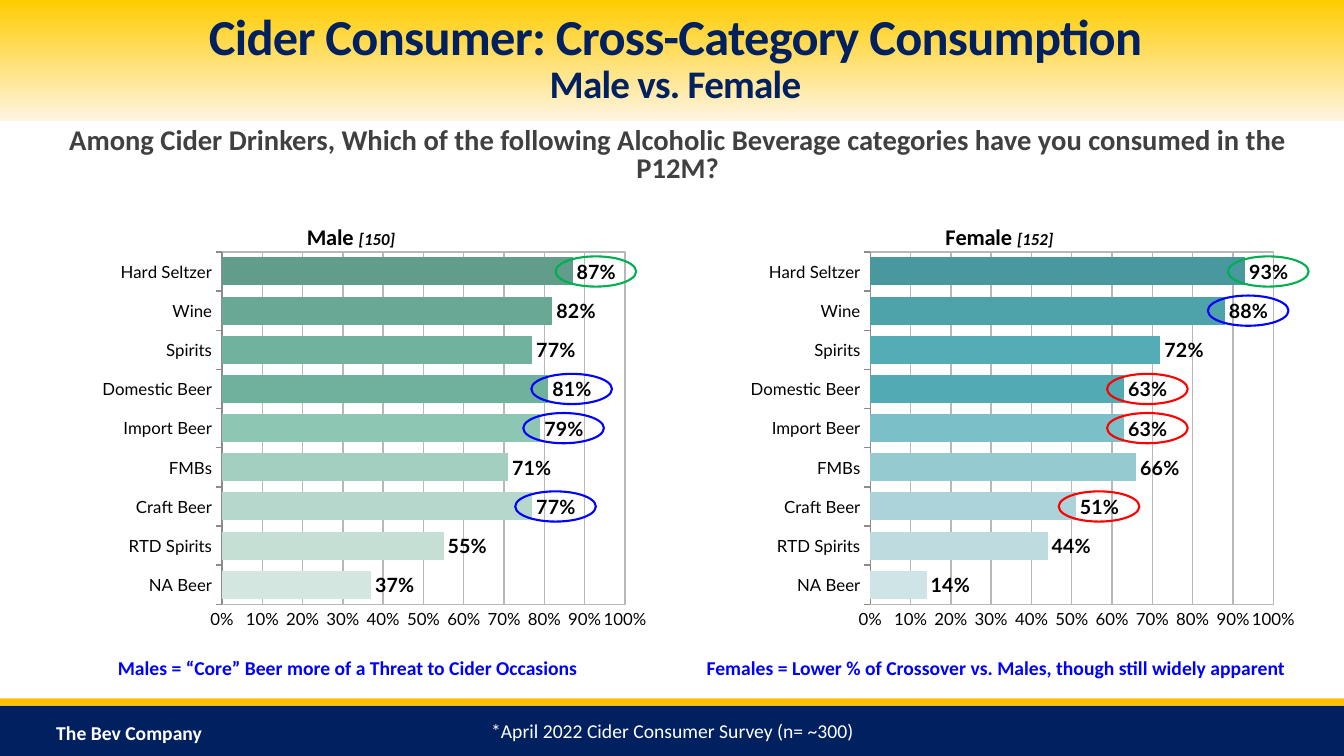
from pptx import Presentation
from pptx.chart.data import CategoryChartData
from pptx.dml.color import RGBColor
from pptx.enum.chart import XL_CHART_TYPE, XL_LABEL_POSITION, XL_TICK_MARK
from pptx.enum.shapes import MSO_SHAPE
from pptx.enum.text import MSO_ANCHOR, PP_ALIGN
from pptx.oxml import parse_xml
from pptx.oxml.ns import nsdecls, qn
from pptx.util import Inches, Pt

NAVY = RGBColor(0x00, 0x20, 0x60)
GOLD = RGBColor(0xFF, 0xC0, 0x00)
YELLOW = RGBColor(0xFF, 0xCC, 0x00)
CREAM = RGBColor(0xFF, 0xF4, 0xE2)
WHITE = RGBColor(0xFF, 0xFF, 0xFF)
BLACK = RGBColor(0x00, 0x00, 0x00)
CHARCOAL = RGBColor(0x40, 0x40, 0x40)
AXIS_GRAY = RGBColor(0x8C, 0x8C, 0x8C)
GRID_GRAY = RGBColor(0xB8, 0xB8, 0xB8)
BLUE = RGBColor(0x00, 0x00, 0xFF)
RED = RGBColor(0xFF, 0x00, 0x00)
GREEN = RGBColor(0x00, 0xB0, 0x50)

COLUMNS, ROWS = 133.3, 75
CHART_TOP, CHART_WIDTH, CHART_HEIGHT = 20, 65, 45
PLOT_X, PLOT_Y, PLOT_WIDTH, PLOT_HEIGHT = 0.308, 0.111, 0.615, 0.777
RING_WIDTH, RING_HEIGHT, RING_OVERLAP = 8, 3, 1.7

BEVERAGES = ["NA Beer", "RTD Spirits", "Craft Beer", "FMBs", "Import Beer",
             "Domestic Beer", "Spirits", "Wine", "Hard Seltzer"]
PANELS = [
    dict(left=66.3, name="Female", sample="[152]", title_x=0.418,
         shares=[0.14, 0.44, 0.51, 0.66, 0.63, 0.63, 0.72, 0.88, 0.93],
         shades="CFE4E7 BEDCE0 ACD3D9 96CAD1 7BC0C8 52AAB4 53ACB6 4EA2AA 49979F",
         rings={"Hard Seltzer": GREEN, "Wine": BLUE, "Domestic Beer": RED,
                "Import Beer": RED, "Craft Beer": RED},
         note="Females = Lower % of Crossover vs. Males, though still widely apparent"),
    dict(left=2, name="Male", sample="[150]", title_x=0.433,
         shares=[0.37, 0.55, 0.77, 0.71, 0.79, 0.81, 0.77, 0.82, 0.87],
         shades="D3E6E0 C5DFD5 B6D7CC A3CFC0 8EC6B4 6EB19C 6FB39E 68A894 619D8A",
         rings={"Hard Seltzer": GREEN, "Domestic Beer": BLUE,
                "Import Beer": BLUE, "Craft Beer": BLUE},
         note="Males = “Core” Beer more of a Threat to Cider Occasions"),
]


def style_font(font, size, color, name="Calibri", bold=False):
    font.size, font.name, font.bold = Pt(size), name, bold
    font.color.rgb = color


def set_layout(parent, index, **shares):
    for old in parent.findall(qn("c:layout")):
        parent.remove(old)
    places = "".join(f'<c:{key} val="{value}"/>' for key, value in shares.items())
    parent.insert(index, parse_xml(
        f'<c:layout {nsdecls("c")}><c:manualLayout>{places}</c:manualLayout></c:layout>'))


class Page:
    def __init__(self, deck):
        self.slide = deck.slides.add_slide(deck.slide_layouts[6])
        self.column = deck.slide_width / COLUMNS
        self.row = deck.slide_height / ROWS

    def area(self, left, top, width, height):
        return (round(left * self.column), round(top * self.row),
                round(width * self.column), round(height * self.row))

    def shape(self, kind, *place):
        shape = self.slide.shapes.add_shape(kind, *self.area(*place))
        shape.shadow.inherit = False
        return shape

    def band(self, top, height, color):
        band = self.shape(MSO_SHAPE.RECTANGLE, 0, top, COLUMNS, height)
        band.fill.solid()
        band.fill.fore_color.rgb = color
        band.line.fill.background()
        return band

    def gradient_band(self, top, height, *colors):
        fill = self.band(top, height, colors[0]).fill
        fill.gradient()
        fill.gradient_angle = 270
        for stop, color, position in zip(fill.gradient_stops, colors, (0, 1)):
            stop.color.rgb, stop.position = color, position

    def ring(self, left, top, color):
        ring = self.shape(MSO_SHAPE.OVAL, left, top, RING_WIDTH, RING_HEIGHT)
        ring.fill.background()
        ring.line.color.rgb, ring.line.width = color, Pt(1.5)

    def text(self, words, place, size, color, bold=True,
             align=PP_ALIGN.CENTER, anchor=MSO_ANCHOR.TOP):
        frame = self.slide.shapes.add_textbox(*self.area(*place)).text_frame
        frame.word_wrap, frame.vertical_anchor = True, anchor
        para = frame.paragraphs[0]
        para.text, para.alignment = words, align
        style_font(para.font, size, color, bold=bold)
        return frame

    def heading(self, title, subtitle, place):
        frame = self.text(title, place, 36, NAVY, anchor=MSO_ANCHOR.MIDDLE)
        para = frame.paragraphs[0]
        para.line_spacing = 0.85
        para.add_line_break()
        span = para.add_run()
        span.text, span.font.size = subtitle, Pt(27.9)
        for span in para.runs:
            span._r.get_or_add_rPr().set("spc", "-50")

    def question(self, words, place):
        frame = self.text(words, place, 20.4, CHARCOAL, anchor=MSO_ANCHOR.MIDDLE)
        frame.margin_left, frame.margin_right = Inches(0.2), Inches(0.1)
        frame.paragraphs[0].line_spacing = 0.8

    def bar_chart(self, panel):
        data = CategoryChartData(number_format="0%")
        data.categories = BEVERAGES
        data.add_series("Series 1", panel["shares"])
        place = self.area(panel["left"], CHART_TOP, CHART_WIDTH, CHART_HEIGHT)
        chart = self.slide.shapes.add_chart(
            XL_CHART_TYPE.BAR_CLUSTERED, *place, data).chart
        style_font(chart.font, 10, BLACK)
        chart.has_legend = False
        self.chart_title(chart, panel)
        self.axes(chart)
        plot = chart.plots[0]
        plot.gap_width, plot.vary_by_categories = 40, False
        plot.has_data_labels = True
        labels = plot.data_labels
        labels.show_value, labels.position = True, XL_LABEL_POSITION.OUTSIDE_END
        labels.number_format, labels.number_format_is_linked = "0%", False
        style_font(labels.font, 14, BLACK, "Lato", True)
        for index, shade in enumerate(panel["shades"].split()):
            fill = plot.series[0].points[index].format.fill
            fill.solid()
            fill.fore_color.rgb = RGBColor.from_string(shade)
        plot_area = chart._chartSpace.chart.plotArea
        set_layout(plot_area, 0, layoutTarget="inner", xMode="edge", yMode="edge",
                   x=PLOT_X, y=PLOT_Y, w=PLOT_WIDTH, h=PLOT_HEIGHT)
        plot_area.append(parse_xml(
            f'<c:spPr {nsdecls("c", "a")}><a:noFill/><a:ln w="12700"><a:solidFill>'
            f'<a:srgbClr val="{GRID_GRAY}"/></a:solidFill></a:ln></c:spPr>'))

    def chart_title(self, chart, panel):
        chart.has_title = True
        para = chart.chart_title.text_frame.paragraphs[0]
        for words, size, italic in ((panel["name"] + " ", 16, False),
                                    (panel["sample"], 12, True)):
            span = para.add_run()
            span.text = words
            style_font(span.font, size, BLACK, bold=True)
            span.font.italic = italic
        set_layout(chart.chart_title._element, 1, xMode="edge", yMode="edge",
                   x=panel["title_x"], y=0.04)

    def axes(self, chart):
        categories, values = chart.category_axis, chart.value_axis
        for axis in (categories, values):
            style_font(axis.tick_labels.font, 12, BLACK, "Lato")
        categories.major_tick_mark = XL_TICK_MARK.OUTSIDE
        categories.format.line.color.rgb = AXIS_GRAY
        categories.format.line.width = Pt(1)
        values.major_tick_mark = XL_TICK_MARK.NONE
        values.format.line.fill.background()
        values.minimum_scale, values.maximum_scale, values.major_unit = 0, 1, 0.1
        values.tick_labels.number_format = "0%"
        values.tick_labels.number_format_is_linked = False
        values.has_major_gridlines = True
        grid = values.major_gridlines.format.line
        grid.color.rgb, grid.width = GRID_GRAY, Pt(1)

    def rings(self, panel):
        step = CHART_HEIGHT * PLOT_HEIGHT / len(BEVERAGES)
        plot_left = panel["left"] + CHART_WIDTH * PLOT_X
        plot_top = CHART_TOP + CHART_HEIGHT * PLOT_Y
        for beverage, color in panel["rings"].items():
            index = BEVERAGES.index(beverage)
            bar_end = plot_left + CHART_WIDTH * PLOT_WIDTH * panel["shares"][index]
            middle = plot_top + step * (len(BEVERAGES) - index - 0.5)
            self.ring(bar_end - RING_OVERLAP, middle - RING_HEIGHT / 2, color)


def main():
    deck = Presentation()
    deck.slide_width, deck.slide_height = Inches(13.33), Inches(7.5)
    page = Page(deck)
    page.gradient_band(0, 12, YELLOW, CREAM)
    page.band(70, 5, NAVY)
    page.band(69.3, 0.7, GOLD)
    page.text("The Bev Company", (4.6, 71.3, 20, 2.7), 14, WHITE,
              align=PP_ALIGN.LEFT, anchor=MSO_ANCHOR.MIDDLE)
    page.heading("Cider Consumer: Cross-Category Consumption", "Male vs. Female",
                 (12, 1, 110, 10))
    page.question("Among Cider Drinkers, Which of the following Alcoholic Beverage "
                  "categories have you consumed in the P12M?", (1.7, 13.5, 130, 4))
    for panel in PANELS:
        page.bar_chart(panel)
        page.rings(panel)
        page.text(panel["note"], (panel["left"], 64.6, CHART_WIDTH, 3.4), 14, BLUE)
    page.text("*April 2022 Cider Consumer Survey (n= ~300)", (41.7, 70.8, 50, 3.4),
              14, WHITE, bold=False)
    deck.save("out.pptx")


if __name__ == "__main__":
    main()
